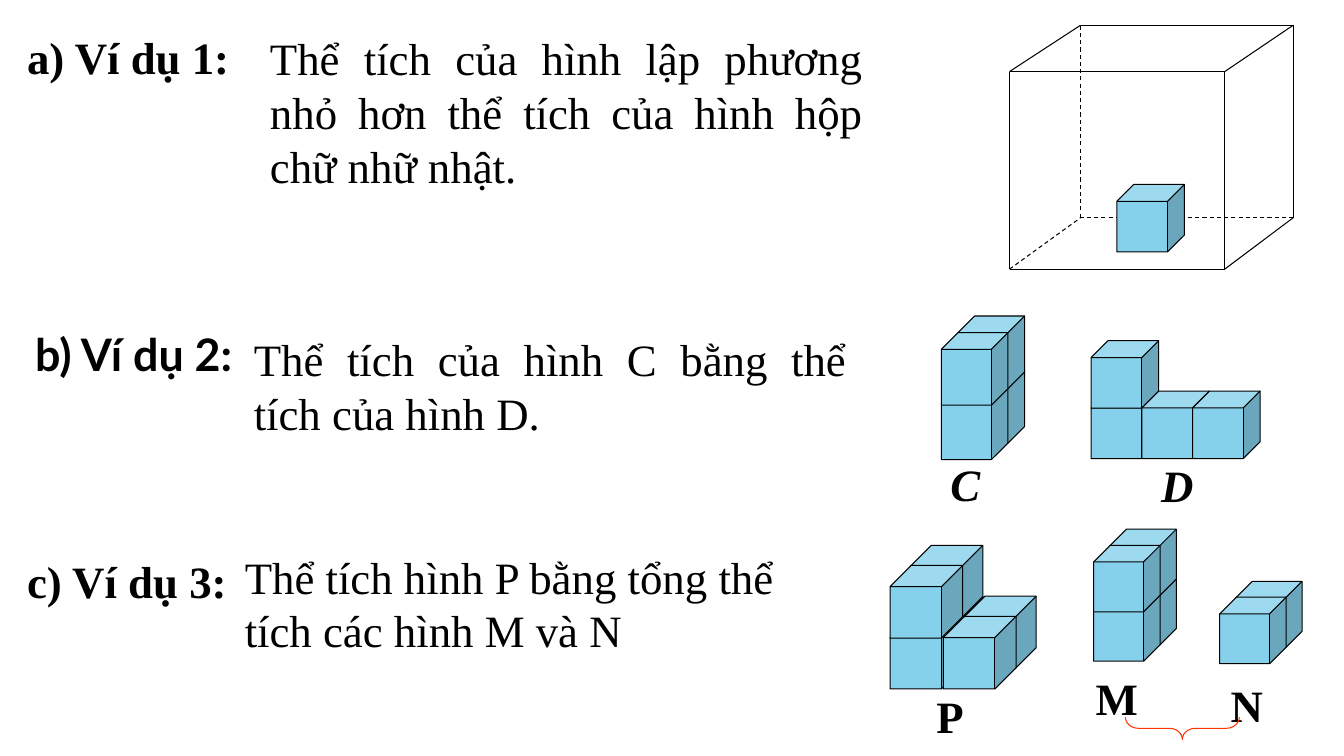
from lxml import etree
from pptx import Presentation
from pptx import util as u
from pptx.dml.color import RGBColor
from pptx.enum import dml, shapes, text
from pptx.oxml.ns import qn

HUES = {"ink": "000000", "cube": "85D0EB", "brace": "FF3300", "paper": "FFFFFF"}
COLS, ROWS = 133.33, 75
SERIF, SANS = "Times New Roman", "Lato"


class Board:
    def __init__(self):
        self.deck = Presentation()
        self.deck.slide_width = u.Inches(13.33)
        self.deck.slide_height = u.Inches(7.5)
        self.slide = self.deck.slides.add_slide(self.deck.slide_layouts[6])
        self.items = self.slide.shapes

    def hue(self, name):
        return RGBColor.from_string(HUES[name])

    def col(self, count):
        return u.Emu(round(self.deck.slide_width * count / COLS))

    def row(self, count):
        return u.Emu(round(self.deck.slide_height * count / ROWS))

    def area(self, left, top, width, height):
        return self.col(left), self.row(top), self.col(width), self.row(height)

    def stroke(self, item, name="ink"):
        item.line.color.rgb = self.hue(name)
        item.line.width = u.Pt(0.75)

    def words(self, line, area, font=SERIF, bold=False, slant=False,
              wrap=True, align=None, back=None):
        box = self.items.add_textbox(*self.area(*area))
        if back:
            box.fill.solid()
            box.fill.fore_color.rgb = self.hue(back)
        frame = box.text_frame
        frame.word_wrap = wrap
        frame.auto_size = text.MSO_AUTO_SIZE.SHAPE_TO_FIT_TEXT
        para = frame.paragraphs[0]
        para.alignment = align
        run = para.add_run()
        run.text = line
        run.font.name = font
        run.font.size = u.Pt(32)
        run.font.bold = bold
        run.font.italic = slant
        run.font.color.rgb = self.hue("ink")

    def edge(self, group, start, end, dash=False):
        line = group.shapes.add_connector(
            shapes.MSO_CONNECTOR.STRAIGHT,
            self.col(start[0]), self.row(start[1]),
            self.col(end[0]), self.row(end[1]))
        self.stroke(line)
        if dash:
            line.line.dash_style = dml.MSO_LINE.DASH
        etree.SubElement(line.element.spPr, qn("a:effectLst"))

    def frame(self, front, back):
        group = self.items.add_group_shape()

        def ring(left, top, right, base):
            return [(left, top), (right, top), (right, base), (left, base)]

        near, far = ring(*front), ring(*back)
        for i in range(4):
            j = (i + 1) % 4
            self.edge(group, far[i], far[j], dash=3 in (i, j))
            self.edge(group, near[i], near[j])
            self.edge(group, near[i], far[i], dash=i == 3)

    def cube(self, home, area, bevel=0.25):
        cube = home.add_shape(shapes.MSO_SHAPE.CUBE, *self.area(*area))
        cube.adjustments[0] = bevel
        cube.shadow.inherit = False
        cube.fill.solid()
        cube.fill.fore_color.rgb = self.hue("cube")
        self.stroke(cube)

    def stack(self, start, size, step, cells, bevel=0.25):
        home = self.items.add_group_shape().shapes
        across, depth, rise = step
        for right, back, up in cells:
            left = start[0] + right * across + back * depth
            top = start[1] - back * depth - up * rise
            self.cube(home, (left, top, *size), bevel)

    def brace(self, area):
        brace = self.items.add_shape(shapes.MSO_SHAPE.LEFT_BRACE, *self.area(*area))
        brace.rotation = 270
        brace.adjustments[0] = 0.585
        brace.adjustments[1] = 0.5
        brace.shadow.inherit = False
        brace.fill.background()
        self.stroke(brace, "brace")

    def save(self):
        self.deck.save("out.pptx")


def main():
    board = Board()
    even = text.PP_ALIGN.JUSTIFY
    tower = [(0, 1, 0), (0, 0, 0), (0, 1, 1), (0, 0, 1)]
    bench = [(0, 0, 0), (0, 0, 1), (1, 0, 0), (2, 0, 0)]

    board.words("a) Ví dụ 1:", (1.7, 2.5, 23.5, 6.4), bold=True)
    board.words("Thể tích của hình lập phương nhỏ hơn thể tích của hình hộp "
                "chữ nhữ nhật.", (25.8, 2.6, 60.8, 17.2), align=even)
    board.frame((100.15, 7.1, 121.5, 26.7), (107.2, 2.5, 128.3, 21.6))
    board.cube(board.items, (110.8, 18.3, 6.7, 6.7))

    board.words("b) Ví dụ 2:", (2.5, 31.9, 23.6, 6.4), SANS, bold=True, wrap=False)
    board.words("Thể tích của hình C bằng thể tích của hình D.",
                (24.2, 32.4, 60.8, 11.8), align=even)
    board.words("C", (93.3, 44.8, 5.6, 6.4), bold=True, slant=True)
    board.words("D", (114.2, 44.9, 5.6, 6.4), bold=True, slant=True, back="paper")
    board.stack((93.4, 38.4), (6.6, 7.2), (0, 1.65, 5.4), tower)
    board.stack((108.25, 38.8), (6.7, 6.7), (5.03, 0, 5), bench)

    board.words("c) Ví dụ 3:", (1.7, 54.4, 22, 6.4), bold=True, wrap=False)
    board.words("Thể tích hình P bằng tổng thể tích các hình M và N",
                (23.3, 54, 59.3, 11.8))
    for name, area in (("P", (91.9, 67.8, 5.6, 6.4)),
                       ("M", (107.7, 66.1, 7.3, 6.4)),
                       ("N", (121.1, 66.7, 7.2, 6.4))):
        board.words(name, area, bold=True)
    board.brace((116.2, 66.6, 2.2, 11.3))
    board.stack((88.3, 61.15), (7.2, 7.2), (5.3, 2, 5.05),
                tower + [(1, 1, 0), (1, 0, 0)], 0.292)
    board.stack((108.5, 59), (6.6, 6.6), (0, 1.6, 4.9), tower)
    board.stack((121, 59.25), (6.6, 6.6), (0, 1.57, 0), tower[:2])
    board.save()


if __name__ == "__main__":
    main()
